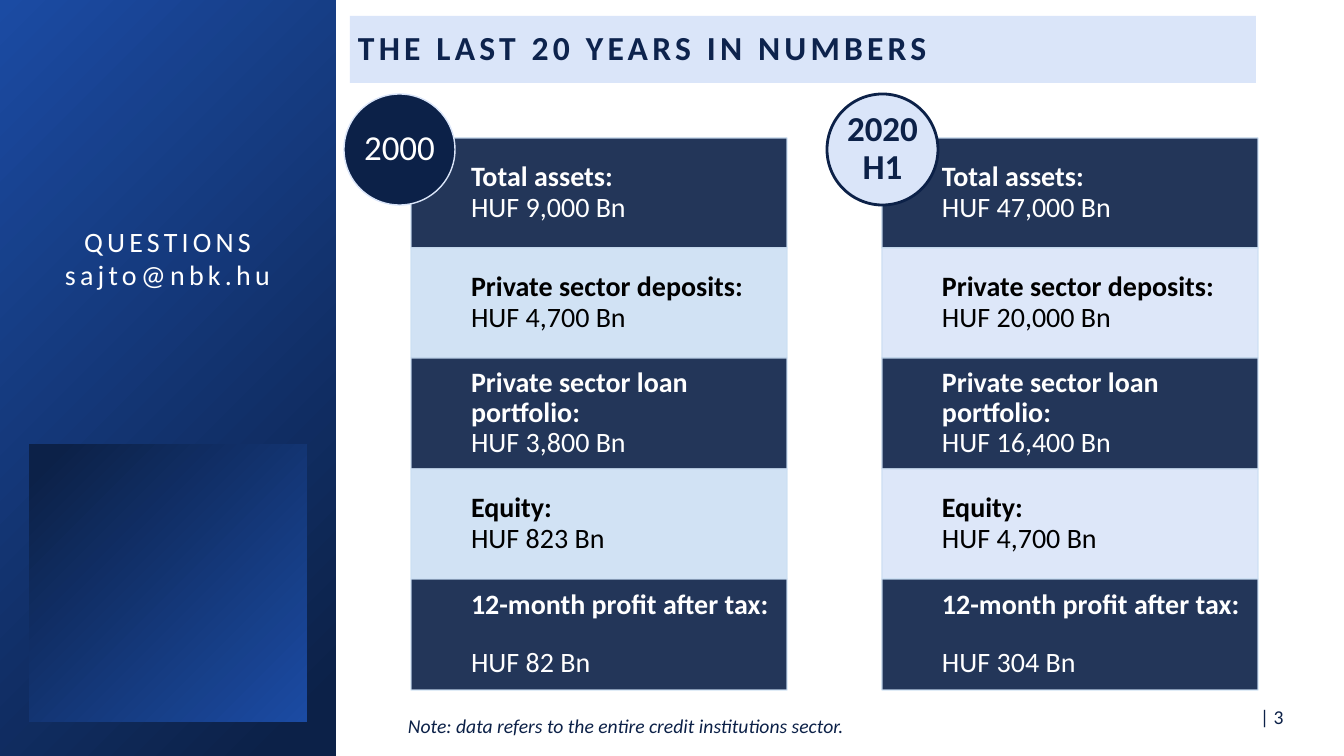
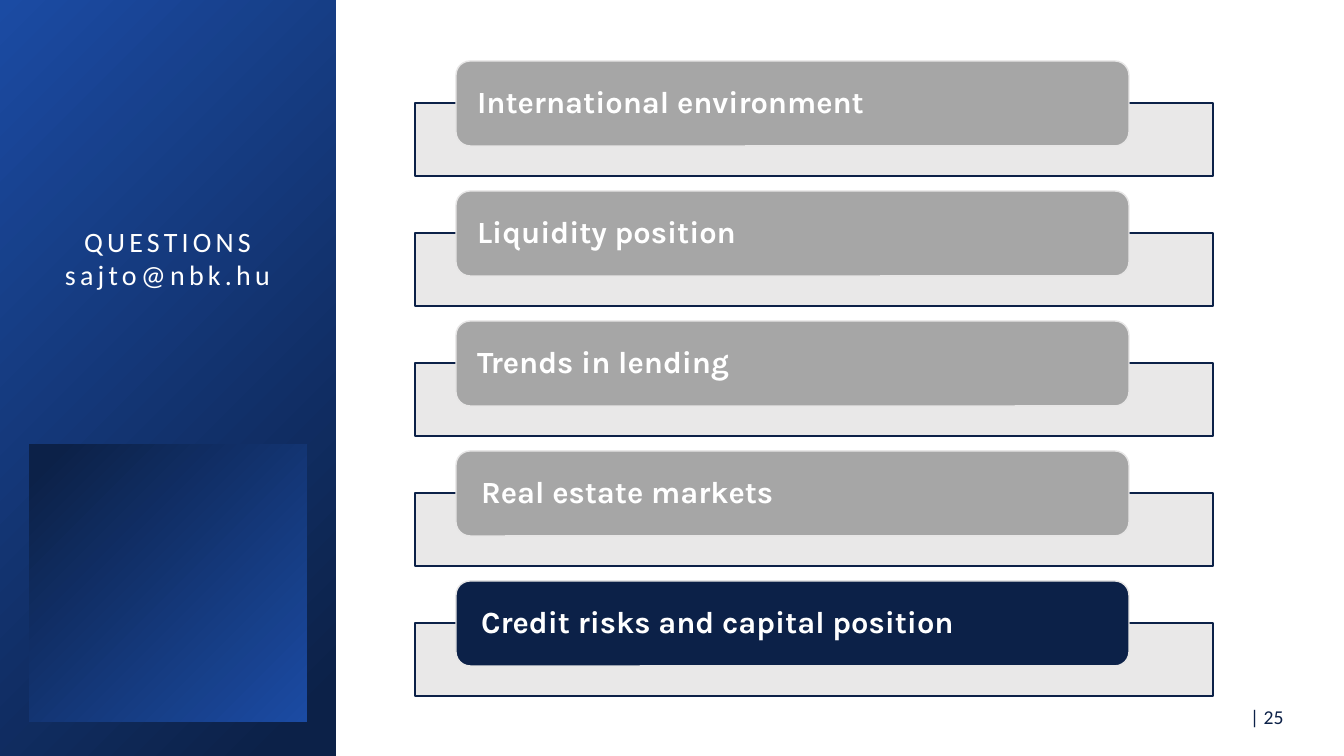
from lxml import etree
from pptx import Presentation
from pptx.dml.color import RGBColor
from pptx.enum.shapes import MSO_SHAPE as Shape
from pptx.enum.text import MSO_ANCHOR as Anchor, PP_ALIGN as Align
from pptx.oxml.ns import qn
from pptx.util import Pt

PX = 914400 / 100.8
COLORS = {
    "navy": "0C2148", "blue": "1B4BA3", "title": "0D234D", "pale": "DAE5F9",
    "sky": "CCDFF3", "mist": "E7E6E6", "gray": "A6A6A6",
    "white": "FFFFFF", "black": "000000",
}
ROW_LABELS = [
    "Total assets:", "Private sector deposits:", "Private sector loan portfolio:",
    "Equity:", "12-month profit after tax: ",
]
AMOUNTS_2000 = ["HUF 9,000 Bn", "HUF 4,700 Bn", "HUF 3,800 Bn", "HUF 823 Bn", "HUF 82 Bn"]
AMOUNTS_2020 = ["HUF 47,000 Bn", "HUF 20,000 Bn", "HUF 16,400 Bn", "HUF 4,700 Bn",
                "HUF 304 Bn"]
TOPICS = [
    ("International environment", 17), ("Liquidity position", 17),
    ("Trends in lending", 17), ("Real estate markets", 21),
    ("Credit risks and capital position", 21),
]


def emu(px):
    return round(px * PX)


def rgb(name):
    return RGBColor.from_string(COLORS[name])


def set_opacity(fill, percent):
    """Make a solid fill partly transparent."""
    color = fill._xPr.find(qn("a:solidFill"))[0]
    etree.SubElement(color, qn("a:alpha")).set("val", str(percent * 1000))


def add_box(page, box, fill=None, line=None, kind=Shape.RECTANGLE, width=1,
            fill_opacity=100, line_opacity=100):
    shape = page.shapes.add_shape(kind, *map(emu, box))
    shape.shadow.inherit = False
    if fill:
        shape.fill.solid()
        shape.fill.fore_color.rgb = rgb(fill)
        if fill_opacity < 100:
            set_opacity(shape.fill, fill_opacity)
    if line:
        shape.line.color.rgb = rgb(line)
        shape.line.width = Pt(width)
        if line_opacity < 100:
            set_opacity(shape.line.fill, line_opacity)
    else:
        shape.line.fill.background()
    return shape


def add_gradient_box(page, box, rotation=0):
    shape = add_box(page, box)
    shape.fill.gradient()
    shape.fill.gradient_angle = 135
    for stop, (name, position) in zip(shape.fill.gradient_stops,
                                      [("navy", 0.06), ("blue", 1)]):
        stop.color.rgb = rgb(name)
        stop.position = position
    shape.rotation = rotation


def set_frame(shape, anchor=Anchor.MIDDLE, insets=(10, 5, 10, 5)):
    """Set wrapping, anchor and insets (left, top, right, bottom)."""
    frame = shape.text_frame
    frame.word_wrap = True
    frame.vertical_anchor = anchor
    (frame.margin_left, frame.margin_top,
     frame.margin_right, frame.margin_bottom) = map(emu, insets)
    return frame


def style_para(para, align=Align.LEFT, spacing=None):
    para.alignment = align
    if spacing:
        para.line_spacing = spacing
    return para


def add_span(para, text, size, color, bold=False, italic=False, font="Calibri", tracking=0):
    span = para.add_run()
    span.text = text
    span.font.name = font
    span.font.size = Pt(size)
    span.font.color.rgb = rgb(color)
    span.font.bold = bold
    span.font.italic = italic
    if tracking:
        span._r.get_or_add_rPr().set("spc", str(tracking * 100))


def add_text_box(page, box, anchor=Anchor.TOP):
    return set_frame(page.shapes.add_textbox(*map(emu, box)), anchor)


def add_sidebar(page, box):
    left, top, width, height = box
    add_gradient_box(page, box)
    add_gradient_box(page, (left + 29, top + 444, 278, 278), 180)
    frame = add_text_box(page, (left + 40, top + 219, 255, 78))
    contact_lines = ["QUESTIONS", "sajto@nbk.hu"]
    for index, text in enumerate(contact_lines):
        para = frame.add_paragraph() if index else frame.paragraphs[0]
        add_span(style_para(para, Align.CENTER), text, 20, "white", tracking=3)


def add_page_number(page, box, number):
    frame = add_text_box(page, box, Anchor.MIDDLE)
    add_span(style_para(frame.paragraphs[0], Align.RIGHT), f"| {number} ", 14, "navy")


def add_title(page, box, text):
    frame = set_frame(add_box(page, box, "pale"), insets=(8, 4, 8, 4))
    para = style_para(frame.paragraphs[0], spacing=0.9)
    add_span(para, text, 24, "title", bold=True, tracking=3)


def add_figures(page, box, amounts, light):
    """Stack one row per amount, dark and light in turn."""
    left, top, width, height = box
    count = len(amounts)
    for index, (label, amount) in enumerate(zip(ROW_LABELS, amounts)):
        start, end = (height * step // count for step in (index, index + 1))
        fill, ink = (light, "black") if index % 2 else ("navy", "white")
        row = add_box(page, (left, top + start, width, end - start), fill, "sky",
                      fill_opacity=90, line_opacity=90)
        frame = set_frame(row, insets=(60, 16, 16, 16))
        para = style_para(frame.paragraphs[0], spacing=0.9)
        add_span(para, label, 20, ink, bold=True)
        para.add_line_break()
        add_span(para, amount, 20, ink)


def add_year_badge(page, box, lines, fill, line, ink, width=1, bold=False):
    badge = add_box(page, box, fill, line, Shape.OVAL, width)
    frame = set_frame(badge, insets=(0, 0, 0, 0))
    para = style_para(frame.paragraphs[0], Align.CENTER, 0.9)
    for index, text in enumerate(lines):
        if index:
            para.add_line_break()
        add_span(para, text, 25, ink, bold=bold)


def add_note(page, box, text):
    frame = add_text_box(page, box)
    add_span(style_para(frame.paragraphs[0]), text, 14, "navy", italic=True)


def add_topic(page, box, text, inset, active):
    """Draw a topic tab over the upper part of its bar."""
    left, top, width, height = box
    add_box(page, (left, top + 42, width, height - 42), "mist", "navy", fill_opacity=90)
    tab = add_box(page, (left + 41, top, 673, 85), "navy" if active else "gray",
                  "mist", Shape.ROUNDED_RECTANGLE)
    frame = set_frame(tab, insets=(inset, 0, inset, 0))
    para = style_para(frame.paragraphs[0], spacing=0.9)
    add_span(para, text, 22, "white", bold=True, font="Karla")


def add_page(deck, number):
    page = deck.slides.add_slide(deck.slide_layouts[6])
    add_sidebar(page, (0, 0, 336, 756))
    add_page_number(page, (1229, 696, 69, 41), number)
    return page


def build_numbers_page(deck):
    page = add_page(deck, 3)
    add_title(page, (350, 16, 906, 67), "THE LAST 20 YEARS IN NUMBERS")
    add_figures(page, (411, 138, 376, 552), AMOUNTS_2000, "sky")
    add_year_badge(page, (344, 94, 111, 111), ["2000"], "navy", "pale", "white")
    add_figures(page, (882, 138, 376, 552), AMOUNTS_2020, "pale")
    add_year_badge(page, (827, 94, 111, 111), ["2020", "H1"], "pale", "navy", "navy",
                   width=2, bold=True)
    add_note(page, (398, 709, 801, 34),
             "Note: data refers to the entire credit institutions sector.")


def build_topics_page(deck, active=4):
    page = add_page(deck, 25)
    for index, (text, inset) in enumerate(TOPICS):
        add_topic(page, (415, 61 + 130 * index, 798, 115), text, inset, index == active)


def main():
    deck = Presentation()
    deck.slide_width, deck.slide_height = emu(1344), emu(756)
    build_numbers_page(deck)
    build_topics_page(deck)
    deck.save("out.pptx")


if __name__ == "__main__":
    main()
